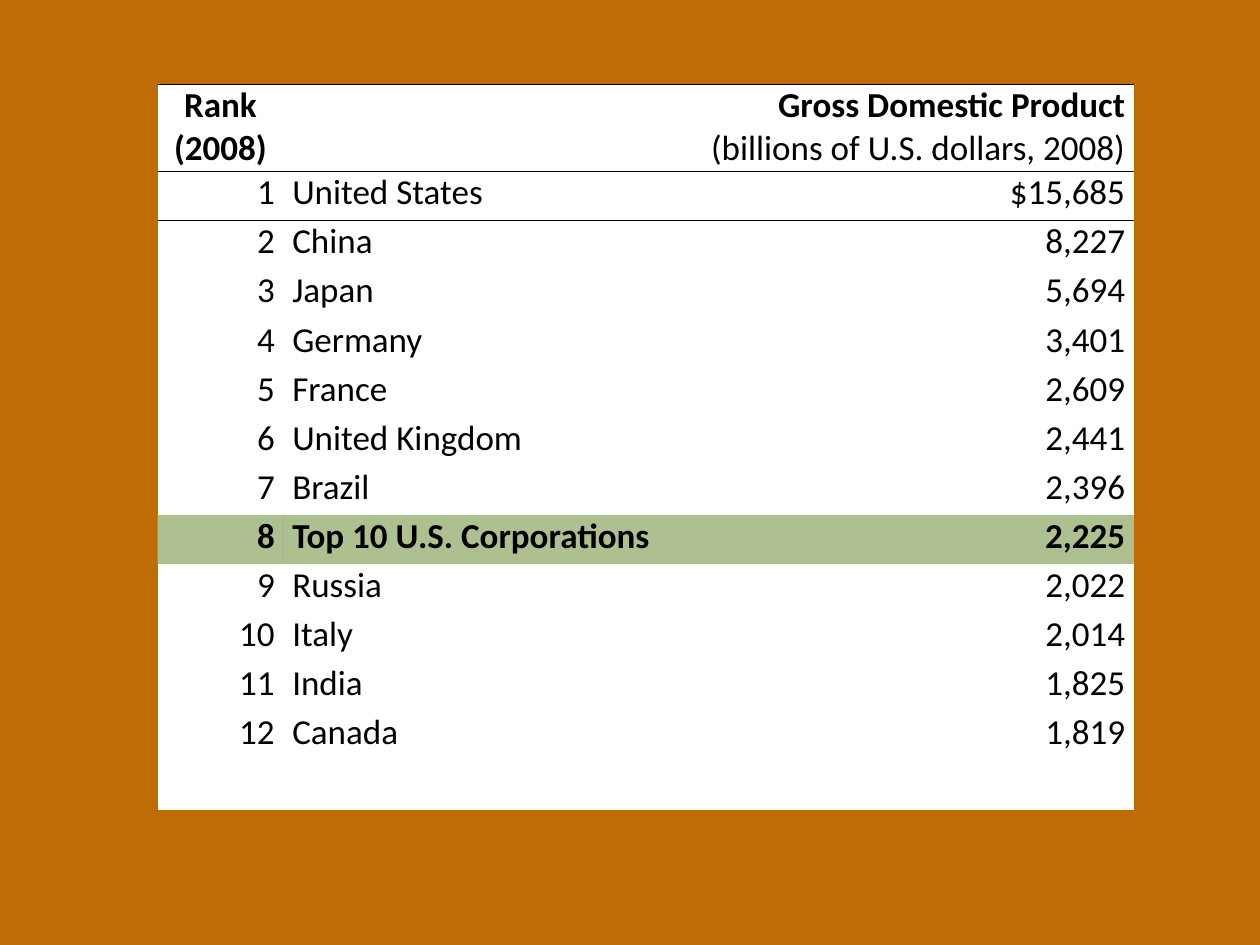
import pptx
import pptx.dml.color
import pptx.enum.text
import pptx.oxml
import pptx.oxml.ns
import pptx.util

Inch = pptx.util.Inches
Pt = pptx.util.Pt
Align = pptx.enum.text.PP_ALIGN
qn = pptx.oxml.ns.qn

WIDE, HIGH = 10, 7.5
COLS = (1, 3.02, 3.73)
HEAD, ROW = 0.69, 0.39
ALIGNS = (Align.RIGHT, Align.LEFT, Align.RIGHT)
PLAIN = "{2D5ABB26-0587-4C30-8999-92F81FD0307C}"  # no style, no grid
BRAND = "Top 10 U.S. Corporations"

RANKS = (
    ("United States", "$15,685"),
    ("China", "8,227"),
    ("Japan", "5,694"),
    ("Germany", "3,401"),
    ("France", "2,609"),
    ("United Kingdom", "2,441"),
    ("Brazil", "2,396"),
    (BRAND, "2,225"),
    ("Russia", "2,022"),
    ("Italy", "2,014"),
    ("India", "1,825"),
    ("Canada", "1,819"),
)


def paint(fill, tone, alpha=None):
    fill.solid()
    fill.fore_color.rgb = pptx.dml.color.RGBColor.from_string(tone)
    if alpha:
        node = fill._xPr.find(".//" + qn("a:srgbClr"))
        node.append(pptx.oxml.parse_xml(
            f'<a:alpha {pptx.oxml.ns.nsdecls("a")} val="{alpha * 1000}"/>'))


def rule(cell, sides):
    """Draw thin black lines; call with sides in the order T, B."""
    for spot, side in enumerate(sides):
        cell._tc.get_or_add_tcPr().insert(spot, pptx.oxml.parse_xml(
            f'<a:ln{side} {pptx.oxml.ns.nsdecls("a")} w="12700"><a:solidFill>'
            f'<a:srgbClr val="000000"/></a:solidFill></a:ln{side}>'))


def write(cell, text, align, bold=False):
    cell.margin_left = cell.margin_right = Inch(0.07)
    cell.margin_top = cell.margin_bottom = 0
    cell.text_frame.text = text
    for para in cell.text_frame.paragraphs:
        para.alignment = align
        for run in para.runs:
            run.font.name, run.font.size = "Calibri", Pt(20)
            run.font.bold = bold
            run.font.color.rgb = pptx.dml.color.RGBColor.from_string("000000")


def make_grid(slide):
    count = len(RANKS) + 2  # header and empty last row
    frame = slide.shapes.add_table(
        count, len(COLS), Inch(WIDE / 8), Inch(0.67),
        Inch(sum(COLS)), Inch(HEAD + ROW * (count - 1)))
    grid = frame.table
    grid.first_row = grid.horz_banding = False
    grid._tbl.tblPr.find(qn("a:tableStyleId")).text = PLAIN
    for col, width in zip(grid.columns, COLS):
        col.width = Inch(width)
    for num, row in enumerate(grid.rows):
        row.height = Inch(ROW if num else HEAD)
    return grid


def fill_head(grid):
    heads = ("Rank\n(2008)", "",
             "Gross Domestic Product\v(billions of U.S. dollars, 2008)")
    aligns = (Align.CENTER, Align.LEFT, Align.RIGHT)
    for col, (text, align) in enumerate(zip(heads, aligns)):
        cell = grid.cell(0, col)
        write(cell, text, align, True)
        paint(cell.fill, "FFFFFF")
        rule(cell, "TB")
    # The unit line is not bold
    grid.cell(0, 2).text_frame.paragraphs[0].runs[1].font.bold = False


def fill_body(grid):
    rows = [(str(rank), *pair) for rank, pair in enumerate(RANKS, 1)]
    rows.append(("", "", ""))
    for num, row in enumerate(rows, 1):
        mark = row[1] == BRAND
        for col, text in enumerate(row):
            cell = grid.cell(num, col)
            write(cell, text, ALIGNS[col], mark)
            paint(cell.fill, *(("AAE2CA", 71) if mark else ("FFFFFF",)))
            if num == 1:
                rule(cell, "T")


def main():
    deck = pptx.Presentation()
    deck.slide_width, deck.slide_height = Inch(WIDE), Inch(HIGH)
    slide = deck.slides.add_slide(deck.slide_layouts[6])
    paint(slide.background.fill, "BD6D03")

    # Ranking table
    grid = make_grid(slide)
    fill_head(grid)
    fill_body(grid)
    deck.save("out.pptx")


if __name__ == "__main__":
    main()
